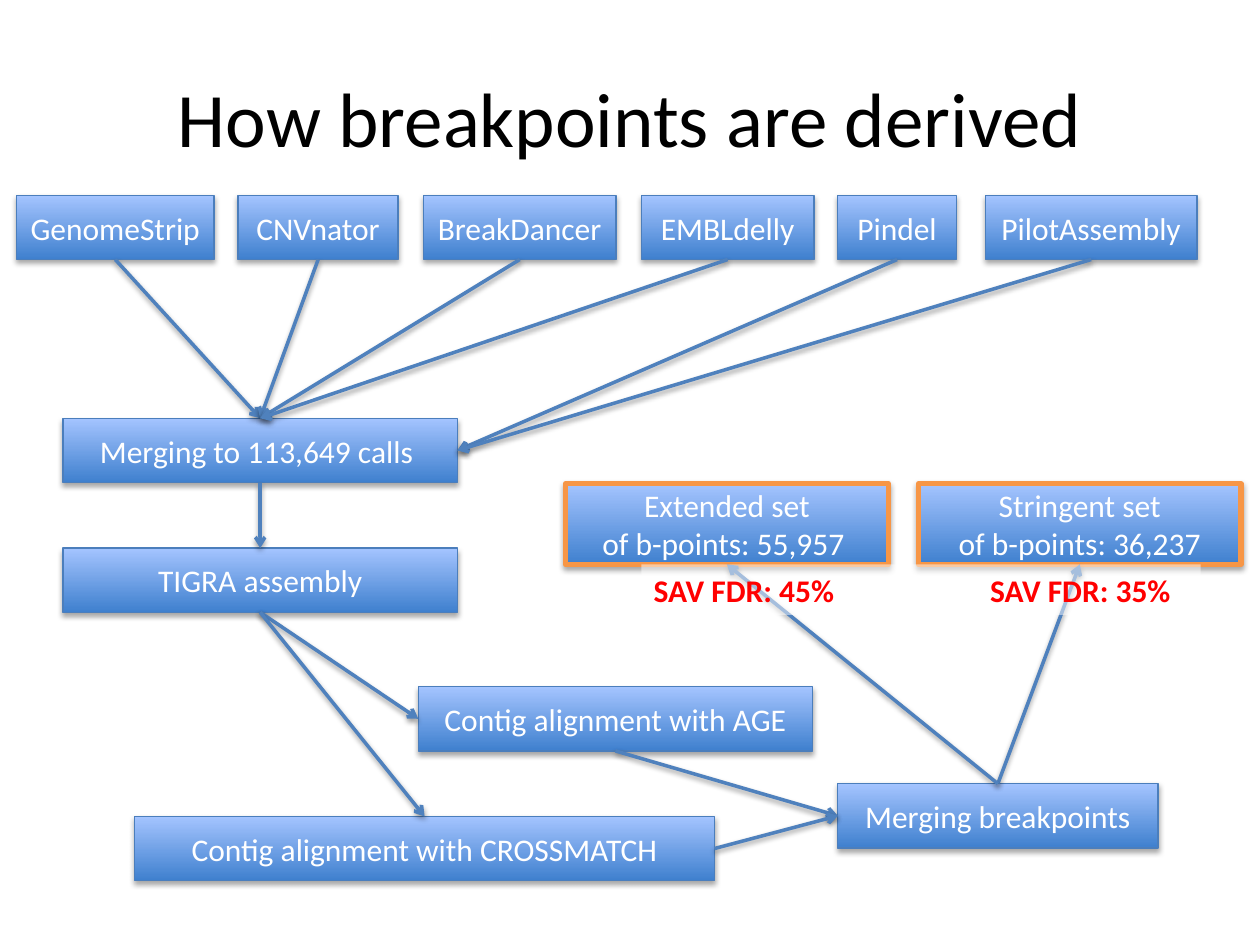
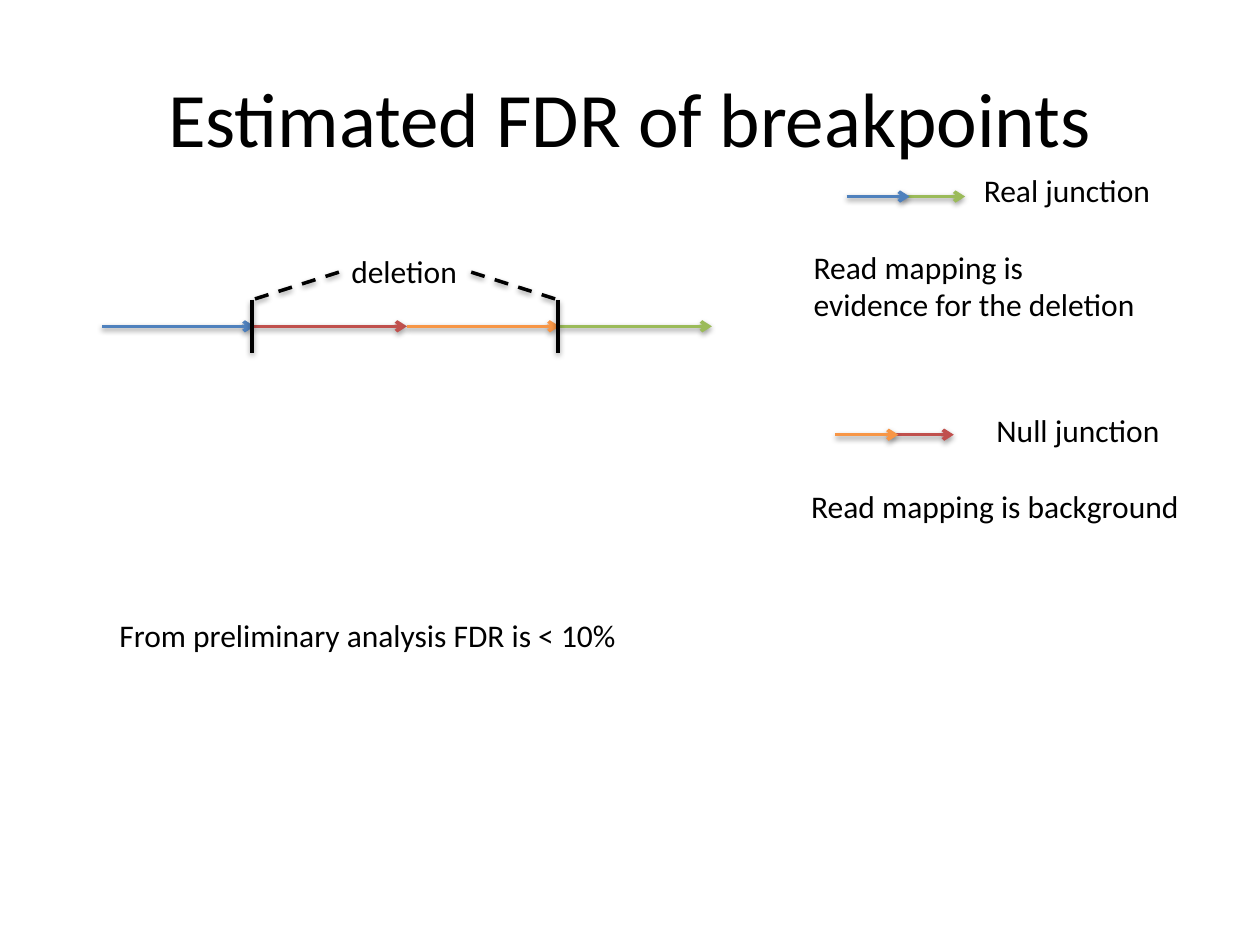
"""Build two slides on how deletion breakpoints are derived and validated."""
from lxml.etree import SubElement
from pptx import Presentation
from pptx.dml.color import RGBColor
from pptx.enum.dml import MSO_LINE_DASH_STYLE as Dash
from pptx.enum.shapes import MSO_CONNECTOR as Connector, MSO_SHAPE as Shape
from pptx.enum.text import MSO_ANCHOR as Anchor, PP_ALIGN as Align
from pptx.oxml import parse_xml
from pptx.oxml.ns import qn
from pptx.util import Inches, Pt

FONT = "Calibri"
BLACK, WHITE, ALERT = "000000", "FFFFFF", "FF0000"
BLUE, RED, ORANGE, GREEN = "4F81BD", "C0504D", "F79646", "9BBB59"
BOX_DARK, BOX_LIGHT, BOX_EDGE = "3F80CE", "A4C4FF", "4B7EBC"
SHADOW = (
    '<a:outerShdw xmlns:a="http://schemas.openxmlformats.org/drawingml/2006/main"'
    ' blurRad="40000" dist="{}" dir="5400000" rotWithShape="0">'
    '<a:srgbClr val="000000"><a:alpha val="{}"/></a:srgbClr></a:outerShdw>'
)
TOP, LEFT, BOTTOM, RIGHT = range(4)
rgb = RGBColor.from_string


def add_text(slide, place, lines, size=18, color=BLACK, bold=False):
    box = slide.shapes.add_textbox(*map(Inches, place))
    frame = box.text_frame
    frame.word_wrap = True
    frame.text = "\n".join(lines)
    for paragraph in frame.paragraphs:
        paragraph.font.name = FONT
        paragraph.font.size = Pt(size)
        paragraph.font.bold = bold
        paragraph.font.color.rgb = rgb(color)
    return box


def add_line(slide, start, end, color=BLUE, arrow=True, dash=None):
    line = slide.shapes.add_connector(Connector.STRAIGHT, *map(Inches, start + end))
    line.line.color.rgb = rgb(color)
    line.line.width = Pt(2)
    if dash:
        line.line.dash_style = dash
    properties = line._element.spPr
    if arrow:
        SubElement(properties.find(qn("a:ln")), qn("a:tailEnd"), type="arrow")
    SubElement(properties, qn("a:effectLst")).append(parse_xml(SHADOW.format(20000, 38000)))
    return line


presentation = Presentation()
presentation.slide_width = Inches(10)
presentation.slide_height = Inches(7.5)

slides = []
for title in ("How breakpoints are derived", "Estimated FDR of breakpoints"):
    slide = presentation.slides.add_slide(presentation.slide_layouts[6])
    title_box = add_text(slide, (0.5, 0.3, 9, 1.25), [title], 44)
    title_box.text_frame.vertical_anchor = Anchor.MIDDLE
    title_box.text_frame.paragraphs[0].alignment = Align.CENTER
    slides.append(slide)
pipeline_slide, fdr_slide = slides

callers = [
    ("GenomeStrip", 0.13, 1.57), ("CNVnator", 1.89, 1.27), ("BreakDancer", 3.36, 1.53),
    ("EMBLdelly", 5.09, 1.37), ("Pindel", 6.65, 0.94), ("PilotAssembly", 7.82, 1.68),
]
steps = [(name, name, left, 1.55, width) for name, left, width in callers] + [
    ("calls", "Merging to 113,649 calls ", 0.5, 3.32, 3.13),
    ("assembly", "TIGRA assembly", 0.5, 4.35, 3.13),
    ("age", "Contig alignment with AGE", 3.32, 5.45, 3.13),
    ("crossmatch", "Contig alignment with CROSSMATCH", 1.07, 6.48, 4.6),
    ("breakpoints", "Merging breakpoints", 6.65, 6.22, 2.54),
    ("extended", "Extended set\nof b-points: 55,957 ", 4.49, 3.84, 2.56),
    ("stringent", "Stringent set\nof b-points: 36,237", 7.29, 3.84, 2.56),
]
boxes = {}
for key, text, left, top, width in steps:
    is_result = key in ("extended", "stringent")
    height = 0.64 if is_result else 0.51
    box = pipeline_slide.shapes.add_shape(
        Shape.RECTANGLE, Inches(left), Inches(top), Inches(width), Inches(height))
    box.fill.gradient()
    box.fill.gradient_angle = 90
    for stop, color in zip(box.fill.gradient_stops, (BOX_DARK, BOX_LIGHT)):
        stop.color.rgb = rgb(color)
    box.line.color.rgb = rgb(ORANGE if is_result else BOX_EDGE)
    box.line.width = Pt(3 if is_result else 0.75)
    box.shadow.inherit = False
    effects = box._element.spPr.find(qn("a:effectLst"))
    effects.append(parse_xml(SHADOW.format(23000, 35000)))
    frame = box.text_frame
    frame.text = text
    frame.vertical_anchor = Anchor.MIDDLE
    for paragraph in frame.paragraphs:
        paragraph.alignment = Align.CENTER
        paragraph.font.name = FONT
        paragraph.font.size = Pt(18)
        paragraph.font.color.rgb = rgb(WHITE)
    boxes[key] = box

links = [(name, BOTTOM, "calls", TOP) for name, _, _ in callers[:4]]
links += [(name, BOTTOM, "calls", RIGHT) for name, _, _ in callers[4:]]
links += [
    ("calls", BOTTOM, "assembly", TOP),
    ("assembly", BOTTOM, "age", LEFT),
    ("assembly", BOTTOM, "crossmatch", TOP),
    ("age", BOTTOM, "breakpoints", LEFT),
    ("crossmatch", RIGHT, "breakpoints", LEFT),
    ("breakpoints", TOP, "stringent", BOTTOM),
    ("breakpoints", TOP, "extended", BOTTOM),
]
for source, source_side, target, target_side in links:
    link = add_line(pipeline_slide, (0, 0), (1, 1))
    link.begin_connect(boxes[source], source_side)
    link.end_connect(boxes[target], target_side)

rates = add_text(pipeline_slide, (5.09, 4.48, 4.44, 0.4),
                 ["SAV FDR: 45%\tSAV FDR: 35%"], color=ALERT, bold=True)
rates.fill.solid()
rates.fill.fore_color.rgb = rgb(WHITE)
SubElement(rates._element.spPr.find(".//" + qn("a:srgbClr")), qn("a:alpha"), val="49000")
paragraph_properties = rates.text_frame.paragraphs[0]._p.get_or_add_pPr()
tab_list = paragraph_properties.makeelement(qn("a:tabLst"))
paragraph_properties.insert(0, tab_list)
SubElement(tab_list, qn("a:tab"), pos=str(Inches(2.67)), algn="l")

segment = 1.21
for index, color in enumerate((BLUE, RED, ORANGE, GREEN)):
    start = 0.81 + index * segment
    add_line(fdr_slide, (start, 2.59), (start + segment, 2.59), color)

for edge, label_side in ((2, 2.69), (4.43, 3.74)):
    add_line(fdr_slide, (edge, 2.38), (edge, 2.8), BLACK, arrow=False)
    add_line(fdr_slide, (label_side, 2.16), (edge, 2.38), BLACK, arrow=False, dash=Dash.DASH)
add_text(fdr_slide, (2.69, 1.95, 1.1, 0.4), ["deletion"])

junctions = [
    (6.72, 1.56, BLUE, GREEN, (6.36, 1.31, 3.2, 1.31), 1.35,
     ["Real junction", "Read mapping is", "evidence for the deletion"]),
    (6.63, 3.45, ORANGE, RED, (6.34, 3.21, 3.3, 1.01), 1.47,
     ["Null junction", "Read mapping is background"]),
]
for left, top, first_color, second_color, place, indent, lines in junctions:
    add_line(fdr_slide, (left + 0.44, top), (left + 0.94, top), second_color)
    add_line(fdr_slide, (left, top), (left + 0.5, top), first_color)
    heading = add_text(fdr_slide, place, lines).text_frame.paragraphs[0]
    heading.space_after = Pt(22)
    heading._p.get_or_add_pPr().set("marL", str(Inches(indent)))

add_text(fdr_slide, (0.85, 4.84, 4.3, 0.4), ["From preliminary analysis FDR is < 10%"])

presentation.save("out.pptx")
